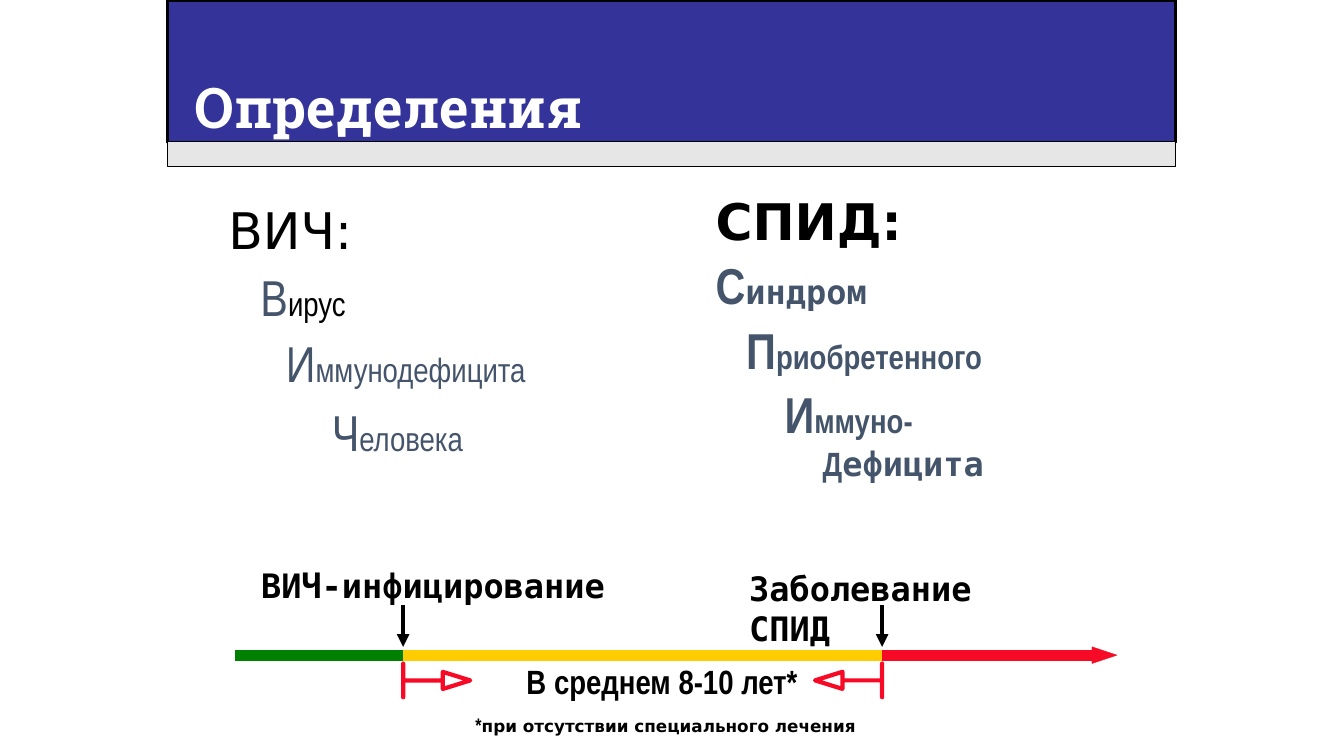
from dataclasses import dataclass
from typing import NamedTuple

import lxml.etree
import pptx
import pptx.dml.color
import pptx.enum.shapes
import pptx.enum.text
import pptx.oxml.ns
import pptx.util

Cm = pptx.util.Cm
Pt = pptx.util.Pt
qn = pptx.oxml.ns.qn
KIND = pptx.enum.shapes.MSO_SHAPE
ALIGN = pptx.enum.text.PP_ALIGN

HUE = {"black": "000000", "white": "FFFFFF", "blue": "333399", "gray": "E7E6E6",
       "slate": "44546A", "green": "008000", "gold": "FFCC00", "red": "F60A26"}
SLAB, SANS, MONO, SLIM = "Roboto Slab", "DejaVu Sans", "DejaVu Sans Mono", "Arial Narrow"


class Box(NamedTuple):
    left: float
    top: float
    width: float
    height: float


class Bit(NamedTuple):
    text: str
    size: float
    face: str
    hue: str = "black"


@dataclass
class Para:
    bits: list[Bit]
    bold: bool = False
    shift: float = 0  # left indent, cm
    gap: float = 0  # space before, pt
    lead: float = 1
    align: ALIGN = ALIGN.LEFT


@dataclass
class Form:
    kind: KIND
    box: Box
    fill: str
    edge: str
    thick: float
    ratios: tuple[float, ...] = ()
    turn: float = 0


@dataclass
class Line:
    start: tuple[float, float]
    end: tuple[float, float]
    hue: str
    thick: float
    head: bool = False


def tint(name: str) -> pptx.dml.color.RGBColor:
    return pptx.dml.color.RGBColor.from_string(HUE[name])


def style(font, key: str, value) -> None:
    if key == "size":
        font.size = Pt(value)
    elif key == "face":
        font.name = value
    else:
        font.color.rgb = tint(value)


def write(shape, box: Box, paras: list[Para]) -> None:
    """Place a text shape and fill it with formatted paragraphs."""
    shape.left, shape.top, shape.width, shape.height = map(Cm, box)
    frame = shape.text_frame
    frame.word_wrap = True
    frame.auto_size = pptx.enum.text.MSO_AUTO_SIZE.NONE
    frame.vertical_anchor = pptx.enum.text.MSO_ANCHOR.TOP
    for i, item in enumerate(paras):
        para = frame.add_paragraph() if i else frame.paragraphs[0]
        para.alignment = item.align
        para.line_spacing = item.lead
        para.space_before = Pt(item.gap)
        props = para._p.get_or_add_pPr()
        props.set("marL", str(Cm(item.shift)))
        props.set("indent", "0")
        lxml.etree.SubElement(props, qn("a:buNone"))
        para.font.bold = item.bold
        runs = [para.add_run() for _ in item.bits]
        for run, bit in zip(runs, item.bits):
            run.text = bit.text
        # Shared traits go on the paragraph, the others on each run
        for key in ("size", "face", "hue"):
            values = [getattr(bit, key) for bit in item.bits]
            if len(set(values)) == 1:
                style(para.font, key, values[0])
            else:
                for run, value in zip(runs, values):
                    style(run.font, key, value)


def draw(slide, form: Form):
    shape = slide.shapes.add_shape(form.kind, *map(Cm, form.box))
    shape.shadow.inherit = False
    shape.fill.solid()
    shape.fill.fore_color.rgb = tint(form.fill)
    shape.line.color.rgb = tint(form.edge)
    shape.line.width = Pt(form.thick)
    shape.rotation = form.turn
    for i, ratio in enumerate(form.ratios):
        shape.adjustments[i] = ratio
    return shape


def link(slide, line: Line) -> None:
    wire = slide.shapes.add_connector(pptx.enum.shapes.MSO_CONNECTOR.STRAIGHT,
                                      *map(Cm, line.start + line.end))
    wire.line.color.rgb = tint(line.hue)
    wire.line.width = Pt(line.thick)
    props = wire.element.spPr
    if line.head:
        lxml.etree.SubElement(props.find(qn("a:ln")), qn("a:tailEnd"), type="triangle")
    lxml.etree.SubElement(props, qn("a:effectLst"))


def term(first: Bit, rest: Bit, bold: bool, shift: float, gap: float) -> Para:
    return Para([first, rest], bold, shift, gap, 0.75)


def cap(text: str) -> Bit:
    return Bit(text, 36, SLIM, "slate")


def tail(text: str, hue: str = "slate", face: str = SLIM) -> Bit:
    return Bit(text, 24, face, hue)


# Time line: infection, illness and end of the axis
AXIS, START, ILL, END = 16.51, 10.16, 22.23, 27.52

BANDS = [
    Form(KIND.RECTANGLE, Box(4.23, 0, 25.4, 3.6), "blue", "black", 2.25),
    Form(KIND.RECTANGLE, Box(4.23, 3.56, 25.4, 0.64), "gray", "black", 0.75),
]
HIV = [
    Para([Bit("ВИЧ:", 36, SANS)]),
    term(cap("В"), tail("ирус", "black"), False, 0.81, 15),
    term(cap("И"), tail("ммунодефицита"), False, 1.45, 15),
    term(cap("Ч"), tail("еловека"), False, 2.61, 16.5),
]
AIDS = [
    Para([Bit("СПИД:", 36, SANS)], True),
    term(cap("С"), tail("индром", face=MONO), True, 0, 13),
    term(cap("П"), tail("риобретенного"), True, 0.77, 13.5),
    term(cap("И"), tail("ммуно-"), True, 1.74, 13.5),
    term(tail("Д"), tail("ефицита", face=MONO), True, 2.7, 7),
]
TITLE = [Para([Bit("Определения", 40, SLAB, "white")], True)]
NOTES = [
    (Box(10.75, 16.54, 12.06, 2.18), [
        Para([Bit("В среднем 8-10 лет* ", 24, SLIM)], True, align=ALIGN.CENTER),
        Para([Bit("*", 14, SLIM), Bit("при отсутствии специального лечения", 12, SANS)],
             True, gap=8, align=ALIGN.CENTER)]),
    (Box(6.33, 14.12, 9.32, 1.27), [Para([Bit("ВИЧ-инфицирование", 24, MONO)], True)]),
    (Box(18.63, 14.18, 8.46, 1.27), [Para([Bit("Заболевание СПИД", 24, MONO)], True)]),
]
LINES = [Line((x, AXIS), (END, AXIS), hue, 8)
         for x, hue in ((5.93, "green"), (START, "gold"), (ILL, "red"))]
LINES += [Line((x, 15.24), (x, 16.3), "black", 3, True) for x in (START, ILL)]
MARKS = [Form(KIND.LEFT_ARROW_CALLOUT, Box(x, 16.72, 1.69, 0.85), "white", "red", 3,
              (0, 0.253, 0.814, 0), turn)
         for x, turn in ((START, 180), (ILL - 1.69, 0))]
MARKS.append(Form(KIND.RIGHT_ARROW, Box(25.61, 16.3, 2.54, 0.42), "red", "red", 0.25,
                  (0.5, 1.5)))


def main() -> None:
    deck = pptx.Presentation()
    deck.slide_width, deck.slide_height = Cm(33.87), Cm(19.05)
    slide = deck.slides.add_slide(deck.slide_layouts[3])
    title, left, right = slide.placeholders

    # Header bands lie behind the title
    for band in BANDS:
        title.element.addprevious(draw(slide, band).element)
    write(title, Box(4.65, 1.7, 25.4, 1.96), TITLE)

    # Two definitions
    write(left, Box(5.5, 4.88, 10.16, 6.88), HIV)
    write(right, Box(17.78, 4.66, 10.16, 7.67), AIDS)

    # Time line with its labels
    for box, paras in NOTES:
        write(slide.shapes.add_textbox(0, 0, 0, 0), box, paras)
    for line in LINES:
        link(slide, line)
    for mark in MARKS:
        draw(slide, mark)

    deck.save("out.pptx")


if __name__ == "__main__":
    main()
